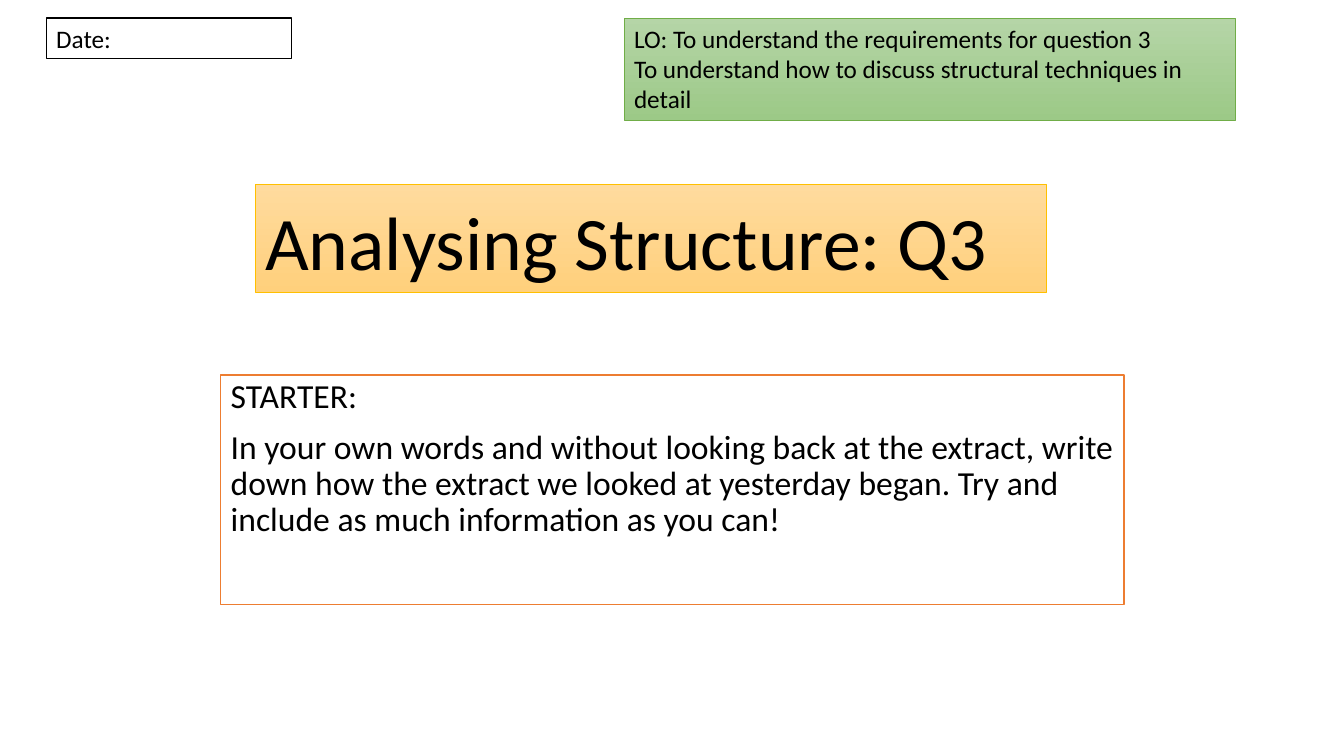
from pptx import Presentation
from pptx import util as u
from pptx.dml.color import RGBColor
from pptx.enum import text

PX = 9144
TITLE_ONLY = 5


def px(length):
    return u.Emu(length * PX)


def colour(code):
    return RGBColor.from_string(code)


def place(shape, box):
    shape.left, shape.top, shape.width, shape.height = map(px, box)


def paint(shape, fills, line, weight):
    if len(fills) == 1:
        shape.fill.solid()
        shape.fill.fore_color.rgb = colour(fills[0])
    else:
        shape.fill.gradient()
        shape.fill.gradient_angle = 270
        for stop, code in zip(shape.fill.gradient_stops, fills):
            stop.color.rgb = colour(code)
    shape.line.color.rgb = colour(line)
    shape.line.width = u.Pt(weight)


def write(shape, *lines, size, spacing=1.0, gap=0, anchor=text.MSO_ANCHOR.TOP):
    frame = shape.text_frame
    frame.word_wrap = True
    frame.auto_size = text.MSO_AUTO_SIZE.NONE
    frame.vertical_anchor = anchor
    for index, line in enumerate(lines):
        para = frame.add_paragraph() if index else frame.paragraphs[0]
        para.alignment = text.PP_ALIGN.LEFT
        para.line_spacing = spacing
        para.space_before = u.Pt(gap if index else 0)
        span = para.add_run()
        span.text = line
        span.font.name = "Calibri"
        span.font.size = u.Pt(size)
        span.font.color.rgb = colour("000000")


def add_title(page, box):
    title = page.shapes.title
    place(title, box)
    paint(title, ["FFDB9E", "FFD07C"], "FFC000", 0.5)
    write(title, "Analysing Structure: Q3", size=54, spacing=0.9,
          anchor=text.MSO_ANCHOR.BOTTOM)


def add_panel(page, box, *lines, fills, line, weight, **style):
    panel = page.shapes.add_textbox(*map(px, box))
    paint(panel, fills, line, weight)
    write(panel, *lines, **style)


def add_starter(page, box):
    add_panel(
        page, box, "STARTER:",
        "In your own words and without looking back at the extract, write down "
        "how the extract we looked at yesterday began. Try and include as much "
        "information as you can!",
        fills=["FFFFFF"], line="ED7D31", weight=1, size=24, spacing=0.9, gap=10)


def add_date(page, box):
    add_panel(page, box, "Date:", fills=["FFFFFF"], line="000000", weight=1, size=18)


def add_objectives(page, box):
    add_panel(
        page, box, "LO: To understand the requirements for question 3",
        "To understand how to discuss structural techniques in detail",
        fills=["B5D5A7", "9CC987"], line="70AD47", weight=0.5, size=18)


def main():
    deck = Presentation()
    deck.slide_width, deck.slide_height = px(1333), px(750)
    page = deck.slides.add_slide(deck.slide_layouts[TITLE_ONLY])
    add_title(page, (253, 183, 785, 107))
    add_starter(page, (219, 372, 896, 228))
    add_date(page, (46, 18, 243, 40))
    add_objectives(page, (619, 18, 606, 101))
    deck.save("out.pptx")


if __name__ == "__main__":
    main()
